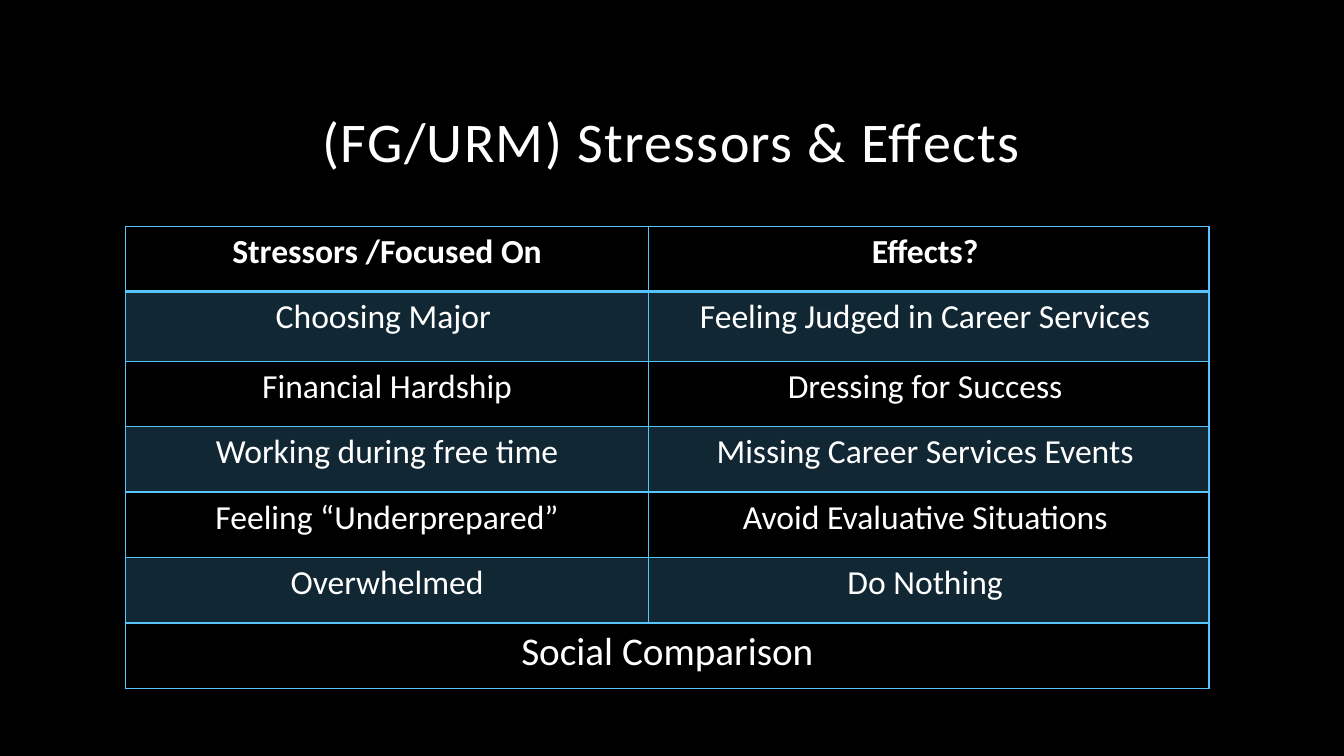
import dataclasses

import lxml.etree
import pptx
import pptx.dml.color
import pptx.enum.text
import pptx.oxml.ns
import pptx.util

Cm = pptx.util.Cm
Pt = pptx.util.Pt
qn = pptx.oxml.ns.qn


@dataclasses.dataclass(frozen=True)
class Theme:
    font: str = "Calibri"
    background: str = "000000"
    text: str = "FFFFFF"
    accent: str = "56C5FF"
    band_alpha: int = 20
    title_size: int = 40
    cell_size: int = 24
    summary_size: int = 28
    rule: int = 1
    header_rule: int = 2


class SlideBuilder:
    def __init__(self, prs, theme):
        self.theme = theme
        self.s = prs.slides.add_slide(prs.slide_layouts[6])
        fill = self.s.background.fill
        fill.solid()
        fill.fore_color.rgb = self.color(theme.background)

    def color(self, value):
        return pptx.dml.color.RGBColor.from_string(value)

    def set_text(self, tf, text, size, bold=False):
        tf.text = text
        p = tf.paragraphs[0]
        p.alignment = pptx.enum.text.PP_ALIGN.CENTER
        r = p.runs[0]
        r.font.name = self.theme.font
        r.font.size = Pt(size)
        r.font.bold = bold
        r.font.color.rgb = self.color(self.theme.text)
        return p, r

    def title(self, text, left, top, width, height):
        sp = self.s.shapes.add_textbox(left, top, width, height)
        tf = sp.text_frame
        tf.word_wrap = True
        tf.vertical_anchor = pptx.enum.text.MSO_ANCHOR.BOTTOM
        p, r = self.set_text(tf, text, self.theme.title_size)
        p.line_spacing = 0.9
        r.font._element.set("spc", "100")

    def borders(self, cell, top, bottom):
        tcPr = cell._tc.get_or_add_tcPr()
        rule = self.theme.rule
        for side, width in (("L", rule), ("R", rule), ("T", top), ("B", bottom)):
            ln = lxml.etree.SubElement(tcPr, qn(f"a:ln{side}"), w=str(Pt(width)))
            fill = lxml.etree.SubElement(ln, qn("a:solidFill"))
            lxml.etree.SubElement(fill, qn("a:srgbClr"), val=self.theme.accent)

    def fill_cell(self, cell, banded):
        if not banded:
            cell.fill.background()
            return
        cell.fill.solid()
        cell.fill.fore_color.rgb = self.color(self.theme.accent)
        clr = cell._tc.tcPr.find(f"{qn('a:solidFill')}/{qn('a:srgbClr')}")
        lxml.etree.SubElement(clr, qn("a:alpha"), val=str(self.theme.band_alpha * 1000))

    def table(self, rows, summary, left, top, widths, heights):
        t = self.theme
        last = len(rows)
        table = self.s.shapes.add_table(
            last + 1, len(widths), left, top, sum(widths), sum(heights)
        ).table
        table.first_row = table.horz_banding = False
        for column, width in zip(table.columns, widths):
            column.width = width
        for i, height in enumerate(heights):
            table.rows[i].height = height
            for j in range(len(widths)):
                cell = table.cell(i, j)
                self.borders(
                    cell,
                    t.header_rule if i == 1 else t.rule,
                    t.header_rule if i == 0 else t.rule,
                )
                self.fill_cell(cell, i % 2 == 1)
                if i < last:
                    self.set_text(cell.text_frame, rows[i][j], t.cell_size, i == 0)
        total = table.cell(last, 0)
        total.merge(table.cell(last, len(widths) - 1))
        self.set_text(total.text_frame, summary, t.summary_size)


def main():
    prs = pptx.Presentation()
    prs.slide_width = Cm(33.87)
    prs.slide_height = Cm(19.05)
    slide = SlideBuilder(prs, Theme())
    slide.title("(FG/URM) Stressors & Effects", Cm(4.23), Cm(0.71), Cm(25.4), Cm(3.81))
    stressors = [
        ("Stressors /Focused On", "Effects? "),
        ("Choosing Major ", "Feeling Judged in Career Services "),
        ("Financial Hardship", "Dressing for Success "),
        ("Working during free time", "Missing Career Services Events "),
        ("Feeling “Underprepared”", "Avoid Evaluative Situations "),
        ("Overwhelmed", "Do Nothing "),
    ]
    slide.table(
        stressors,
        "Social Comparison",
        Cm(3.16),
        Cm(5.7),
        [Cm(13.19), Cm(14.12)],
        [Cm(1.65), Cm(1.75)] + [Cm(1.65)] * 5,
    )
    prs.save("out.pptx")


if __name__ == "__main__":
    main()
